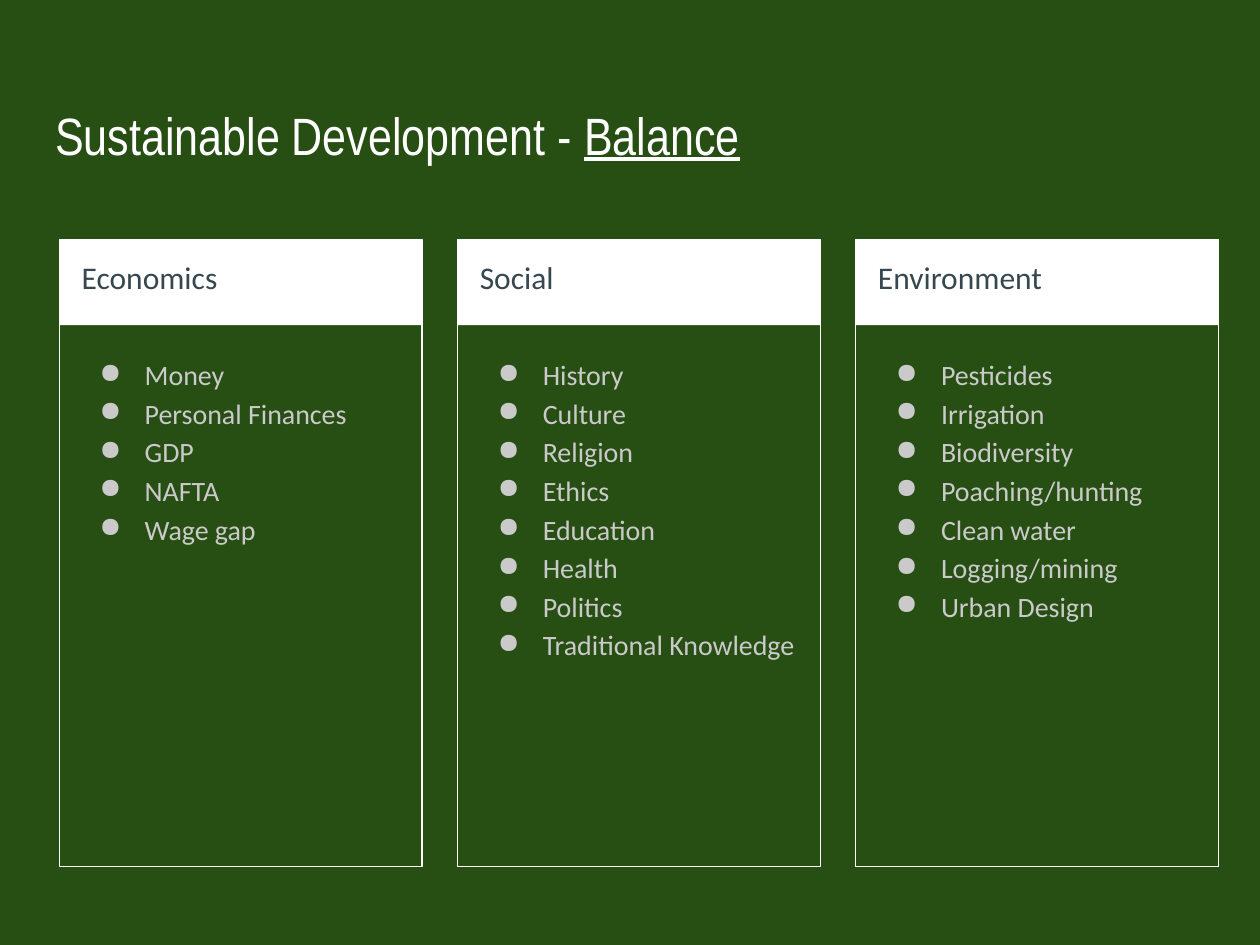
from dataclasses import dataclass

from lxml.etree import SubElement
from pptx import Presentation
from pptx.dml.color import RGBColor as Color
from pptx.enum.shapes import MSO_SHAPE as Shape
from pptx.enum.text import MSO_ANCHOR as Anchor
from pptx.oxml.ns import qn
from pptx.util import Inches, Pt


@dataclass(frozen=True)
class Theme:
    background: str = "274E13"
    white: str = "FFFFFF"
    heading: str = "37474F"
    body: str = "CACACA"
    title_font: str = "Arial Narrow"
    text_font: str = "Calibri"
    title_size: int = 30
    heading_size: int = 18
    body_size: int = 16
    line_width: float = 0.75
    line_spacing: float = 1.15


class SlideBuilder:
    COLUMNS, ROWS = 100, 75

    def __init__(self, deck, theme):
        self.theme = theme
        self.column = deck.slide_width / self.COLUMNS
        self.row = deck.slide_height / self.ROWS
        self.page = deck.slides.add_slide(deck.slide_layouts[6])
        fill = self.page.background.fill
        fill.solid()
        fill.fore_color.rgb = Color.from_string(theme.background)

    def place(self, left, top, width, height):
        return (round(left * self.column), round(top * self.row),
                round(width * self.column), round(height * self.row))

    def rectangle(self, area, fill=None, line=None):
        box = self.page.shapes.add_shape(Shape.RECTANGLE, *self.place(*area))
        box.shadow.inherit = False
        if fill:
            box.fill.solid()
            box.fill.fore_color.rgb = Color.from_string(fill)
        else:
            box.fill.background()
        if line:
            box.line.color.rgb = Color.from_string(line)
            box.line.width = Pt(self.theme.line_width)
        else:
            box.line.fill.background()

    def text(self, area, lines, font, size, color, spacing=None, anchor=Anchor.TOP):
        box = self.page.shapes.add_textbox(*self.place(*area))
        frame = box.text_frame
        frame.word_wrap = True
        frame.vertical_anchor = anchor
        frame.margin_left = frame.margin_right = Inches(0.1)
        frame.margin_top = frame.margin_bottom = Inches(0.1)
        frame.text = "\n".join(lines)
        for para in frame.paragraphs:
            para.line_spacing = spacing
            for span in para.runs:
                self.style(span, font, size, color)
        return frame

    def style(self, span, font, size, color):
        span.font.name = font
        span.font.size = Pt(size)
        span.font.color.rgb = Color.from_string(color)

    def title(self, area, lead, underlined):
        look = self.theme.title_font, self.theme.title_size, self.theme.white
        frame = self.text(area, [lead], *look, anchor=Anchor.MIDDLE)
        span = frame.paragraphs[0].add_run()
        span.text = underlined
        self.style(span, *look)
        span.font.underline = True

    def bullets(self, area, items):
        theme = self.theme
        frame = self.text(area, items, theme.text_font, theme.body_size,
                          theme.body, theme.line_spacing)
        for para in frame.paragraphs:
            settings = para._p.get_or_add_pPr()
            settings.set("marL", str(Inches(0.5)))
            settings.set("indent", str(Inches(-0.36)))
            color = SubElement(settings, qn("a:buClr"))
            SubElement(color, qn("a:srgbClr"), val=theme.body)
            SubElement(settings, qn("a:buChar"), char="●")

    def card(self, left, heading, items):
        theme = self.theme
        self.rectangle((left, 19, 28.8, 6.8), fill=theme.white)
        self.rectangle((left, 19, 28.8, 49.8), line=theme.white)
        self.text((left + 0.8, 19, 27.3, 6.7), [heading], theme.text_font,
                  theme.heading_size, theme.heading, theme.line_spacing)
        self.bullets((left + 0.8, 27, 27.1, 40.8), items)


PILLARS = {
    "Economics": ["Money", "Personal Finances", "GDP", "NAFTA", "Wage gap"],
    "Social": ["History", "Culture", "Religion", "Ethics", "Education",
               "Health", "Politics", "Traditional Knowledge"],
    "Environment": ["Pesticides", "Irrigation", "Biodiversity", "Poaching/hunting",
                    "Clean water", "Logging/mining", "Urban Design"],
}


def main():
    deck = Presentation()
    deck.slide_width, deck.slide_height = Inches(10), Inches(7.5)
    slide = SlideBuilder(deck, Theme())
    slide.title((3.4, 6.5, 93.2, 8.3), "Sustainable Development - ", "Balance")
    for index, (heading, items) in enumerate(PILLARS.items()):
        slide.card(4.7 + 31.6 * index, heading, items)
    deck.save("out.pptx")


if __name__ == "__main__":
    main()
